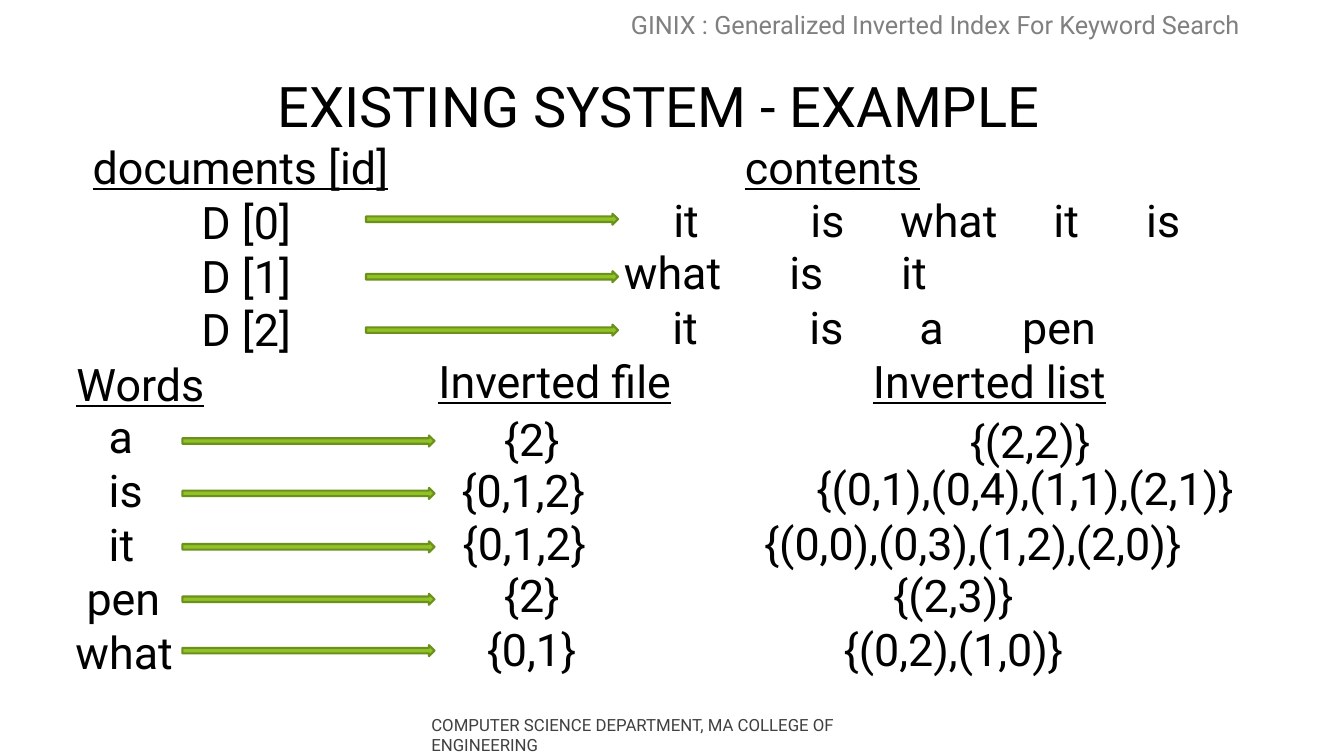
from lxml.etree import SubElement
from pptx import Presentation
from pptx.dml.color import RGBColor
from pptx.enum.shapes import MSO_SHAPE
from pptx.enum.text import MSO_ANCHOR, PP_ALIGN
from pptx.oxml.ns import qn
from pptx.util import Inches, Pt


def style(paragraph, size, color, underline=None):
    font = paragraph.font
    font.name = "Roboto"
    font.size = Pt(size)
    font.underline = underline
    font.color.rgb = RGBColor.from_string(color)


def add_text(lines, left, top, width, height=0.64, size=32, color="000000",
             underline=None, tabs=(), indents=()):
    """Add one paragraph per line; tabs and indents are inches from the text edge."""
    frame = slide.shapes.add_textbox(
        Inches(left), Inches(top), Inches(width), Inches(height)).text_frame
    frame.word_wrap = True
    frame.text = "\n".join(lines)
    for paragraph in frame.paragraphs:
        properties = paragraph._p.get_or_add_pPr()
        if tabs:
            stops = SubElement(properties, qn("a:tabLst"))
            for position in tabs:
                SubElement(stops, qn("a:tab"), pos=str(Inches(position)), algn="l")
        style(paragraph, size, color, underline)
    for paragraph, indent in zip(frame.paragraphs, indents):
        paragraph._p.get_or_add_pPr().set("marL", str(Inches(indent)))


presentation = Presentation()
presentation.slide_width = Inches(13.33)
presentation.slide_height = Inches(7.5)
slide = presentation.slides.add_slide(presentation.slide_layouts[5])

title = slide.shapes.title
title.left, title.top = Inches(0.74), Inches(0.67)
title.width, title.height = Inches(11.58), Inches(0.74)
title.text_frame.text = "EXISTING SYSTEM - EXAMPLE"
title.text_frame.vertical_anchor = MSO_ANCHOR.MIDDLE
title.text_frame.paragraphs[0].alignment = PP_ALIGN.CENTER
style(title.text_frame.paragraphs[0], 40, "000000")

add_text(["GINIX : Generalized Inverted Index For Keyword Search"],
         6.16, 0.04, 6.45, 0.4, size=18, color="808080")
add_text(["COMPUTER SCIENCE DEPARTMENT, MA COLLEGE OF ENGINEERING"],
         4.18, 7.04, 4.8, 0.33, size=12, color="404040")

headings = [
    ("documents [id]", 0.82, 1.34),
    ("contents", 7.29, 1.34),
    ("Words", 0.66, 3.49),
    ("Inverted file", 4.25, 3.46),
    ("Inverted list", 8.56, 3.46),
]
for heading, left, top in headings:
    add_text([heading], left, top, 3.3, underline=True)

# Documents and the words they contain
add_text(["D [0]", "D [1]", "D [2]"], 1.9, 1.88, 1.56, 1.72)
contents = [
    ("it\tis\twhat\tit\tis", 6.58, 1.86, (1.36, 2.25, 3.77, 4.69)),
    ("what\tis\tit", 6.09, 2.38, (1.64, 2.75)),
    ("it\tis\ta\tpen", 6.57, 2.92, (1.36, 2.45, 3.47)),
]
for words, left, top, tabs in contents:
    add_text([words], left, top, 6.2, tabs=tabs)

# Words with their inverted file and inverted list
add_text(["a", "is", "it", "pen", "what"], 0.65, 4.01, 1.35, 2.79,
         indents=(0.33, 0.33, 0.33, 0.11, 0))
index_entries = [
    ("{2}", 4.9, 4.04),
    ("{0,1,2}", 4.48, 4.54),
    ("{0,1,2}", 4.49, 5.07),
    ("{2}", 4.9, 5.58),
    ("{0,1}", 4.73, 6.12),
    ("{(2,2)}", 9.52, 4.06),
    ("{(0,1),(0,4),(1,1),(2,1)}", 8, 4.52),
    ("{(0,0),(0,3),(1,2),(2,0)}", 7.48, 5.07),
    ("{(2,3)}", 8.76, 5.58),
    ("{(0,2),(1,0)}", 8.27, 6.12),
]
for entry, left, top in index_entries:
    add_text([entry], left, top, 4.7 if left > 7 else 1.8)

document_arrows = [(3.63, top) for top in (2.12, 2.69, 3.22)]
word_arrows = [(1.81, top) for top in (4.32, 4.84, 5.37, 5.89, 6.4)]
for left, top in document_arrows + word_arrows:
    arrow = slide.shapes.add_shape(
        MSO_SHAPE.RIGHT_ARROW, Inches(left), Inches(top), Inches(2.5), Inches(0.11))
    arrow.shadow.inherit = False
    arrow.fill.solid()
    arrow.fill.fore_color.rgb = RGBColor.from_string("90C226")
    arrow.line.color.rgb = RGBColor.from_string("6B901C")
    arrow.line.width = Pt(1.5)

presentation.save("out.pptx")
